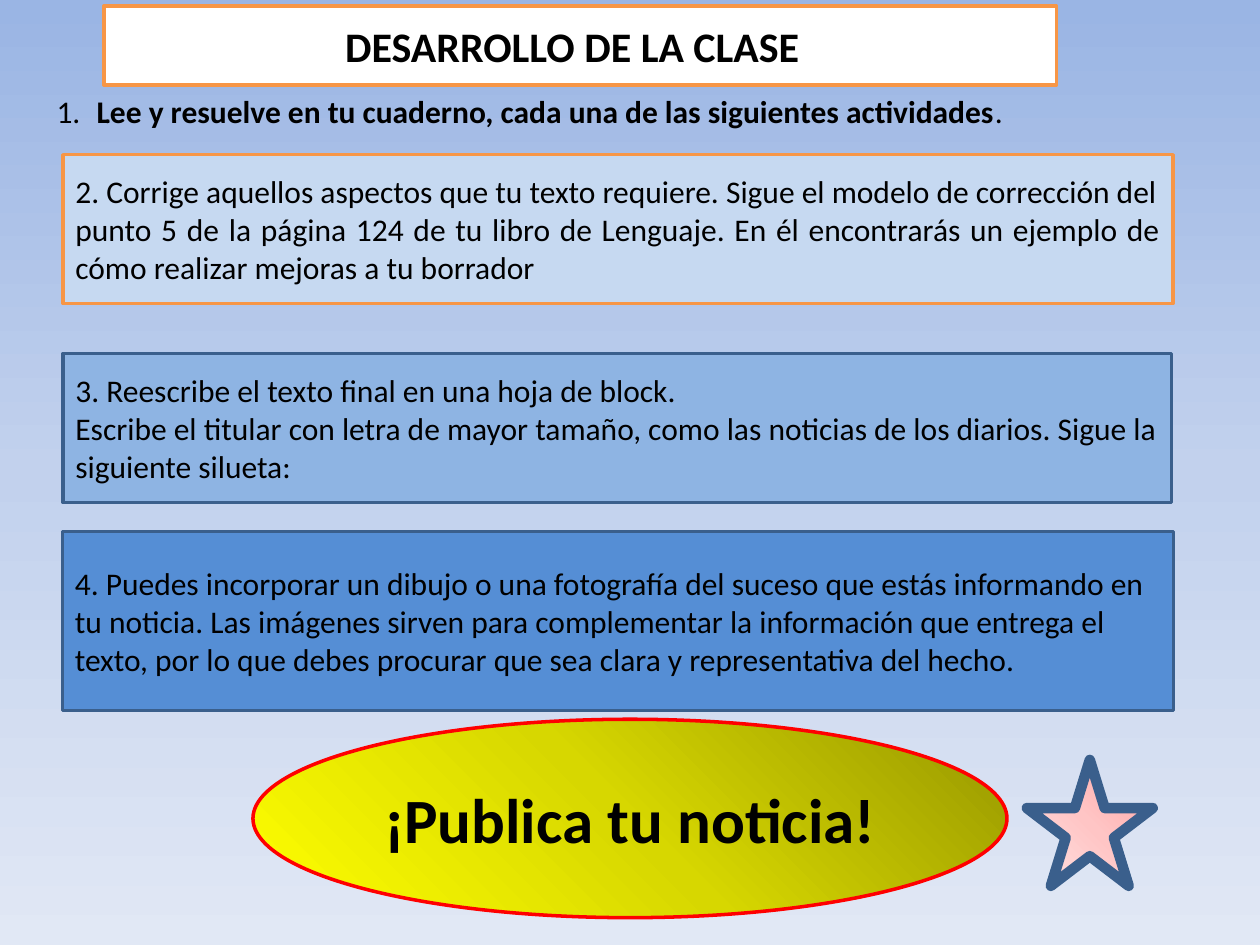
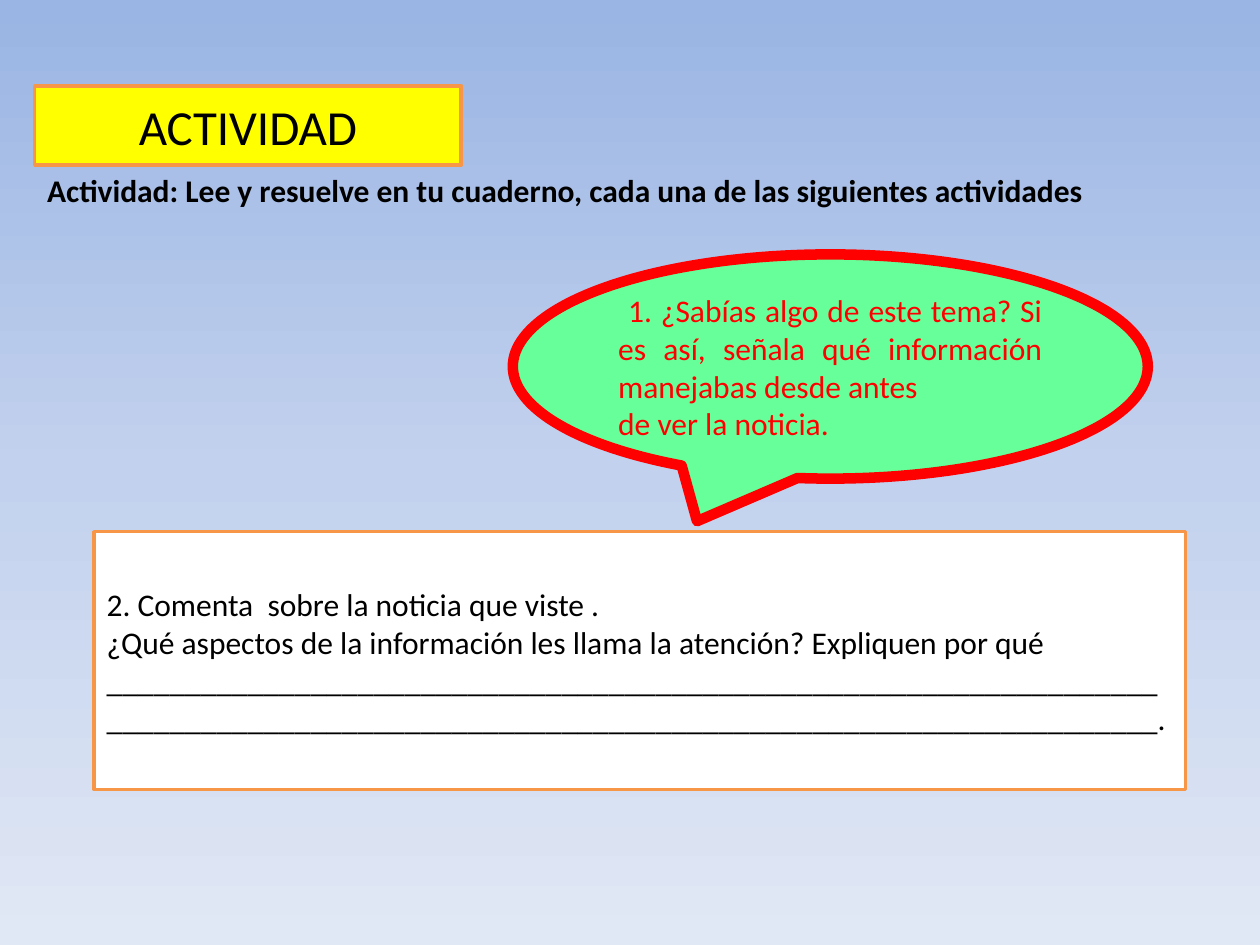
from lxml import etree
from pptx import Presentation
from pptx.dml.color import RGBColor
from pptx.enum.shapes import MSO_SHAPE
from pptx.enum.text import MSO_ANCHOR, PP_ALIGN
from pptx.oxml.ns import qn
from pptx.util import Cm, Pt

RECTANGLE = MSO_SHAPE.RECTANGLE
OVAL = MSO_SHAPE.OVAL
STAR = MSO_SHAPE.STAR_5_POINT
CALLOUT = MSO_SHAPE.OVAL_CALLOUT
LEFT, CENTER, JUSTIFY = PP_ALIGN.LEFT, PP_ALIGN.CENTER, PP_ALIGN.JUSTIFY
MIDDLE = MSO_ANCHOR.MIDDLE

FONT = "Calibri"
COLORS = {
    "black": "000000",
    "white": "FFFFFF",
    "yellow": "FFFF00",
    "red": "FF0000",
    "orange": "F79646",
    "navy": "3A5F8C",
    "pale_blue": "C6D9F1",
    "light_blue": "8EB4E3",
    "blue": "558ED5",
    "green": "66FF99",
}
GRADIENTS = {
    "sky": ("9AB5E4", "C2D1ED", "E1E8F5"),
    "gold": ("979700", "D7D700", "FFFF00"),
    "rose": ("FFA0A0", "FFC5C5", "FFE3E3"),
}


def rgb(name):
    return RGBColor.from_string(COLORS[name])


def paint_gradient(fill, owner, name, angle=None):
    """Fill with three even stops; without an angle, radiate from the top right."""
    fill.gradient()
    gradient = owner.element.find(".//" + qn("a:gradFill"))
    for child in list(gradient):
        gradient.remove(child)
    stops = etree.SubElement(gradient, qn("a:gsLst"))
    for index, color in enumerate(GRADIENTS[name]):
        stop = etree.SubElement(stops, qn("a:gs"), pos=str(index * 50000))
        etree.SubElement(stop, qn("a:srgbClr"), val=color)
    if angle is None:
        circle = etree.SubElement(gradient, qn("a:path"), {"path": "circle"})
        etree.SubElement(circle, qn("a:fillToRect"), l="100000", b="100000")
    else:
        etree.SubElement(gradient, qn("a:lin"), ang=str(angle * 60000), scaled="0")


def write(frame, lines, size=18, bold=False, color="black", align=LEFT):
    frame.word_wrap = True
    for index, line in enumerate(lines):
        paragraph = frame.paragraphs[0] if index == 0 else frame.add_paragraph()
        paragraph.alignment = align
        paragraph.font.name = FONT
        paragraph.font.size = Pt(size)
        paragraph.font.bold = bold
        paragraph.font.color.rgb = rgb(color)
        paragraph.add_run().text = line


def add_figure(slide, kind, box, line, width=2, fill=None):
    figure = slide.shapes.add_shape(kind, *map(Cm, box))
    figure.shadow.inherit = False
    if fill:
        figure.fill.solid()
        figure.fill.fore_color.rgb = rgb(fill)
    figure.line.color.rgb = rgb(line)
    figure.line.width = Pt(width)
    return figure


def add_panel(slide, box, fill, line, lines, kind=RECTANGLE, width=2, **style):
    panel = add_figure(slide, kind, box, line, width, fill)
    panel.text_frame.vertical_anchor = MIDDLE
    write(panel.text_frame, lines, **style)
    return panel


def add_text(slide, box, text, **style):
    frame = slide.shapes.add_textbox(*map(Cm, box)).text_frame
    write(frame, [text], **style)
    return frame.paragraphs[0]


def number(paragraph, indent):
    properties = paragraph._p.get_or_add_pPr()
    properties.set("marL", str(indent))
    properties.set("indent", str(-indent))
    numbering = etree.Element(qn("a:buAutoNum"), type="arabicPeriod")
    properties.insert(0, numbering)


def build_lesson(slide):
    number(add_text(slide, (0.89, 1.73, 22.81, 6.4), ".", align=JUSTIFY), Cm(0.95))
    title = add_panel(slide, (2.1, 0.12, 19.2, 1.6), "white", "orange",
                      ["DESARROLLO DE LA CLASE"], size=24, bold=True, align=CENTER)
    title.text_frame.margin_right = Cm(0.58)
    add_panel(slide, (1.27, 3.12, 22.38, 3), "pale_blue", "orange", [
        "2. Corrige aquellos aspectos que tu texto requiere. Sigue el modelo de corrección del",
        "punto 5 de la página 124 de tu libro de Lenguaje. En él encontrarás un ejemplo de "
        "cómo realizar mejoras a tu borrador",
    ], align=JUSTIFY)
    instruction = add_text(
        slide, (1.7, 1.73, 21.59, 1.02),
        "Lee y resuelve en tu cuaderno, cada una de las siguientes actividades", bold=True)
    full_stop = instruction.add_run()
    full_stop.text = "."
    full_stop.font.bold = False
    add_panel(slide, (1.27, 7.13, 22.35, 3), "light_blue", "navy", [
        "3. Reescribe el texto final en una hoja de block.",
        "Escribe el titular con letra de mayor tamaño, como las noticias de los diarios. "
        "Sigue la siguiente silueta:",
    ])
    add_panel(slide, (1.26, 10.72, 22.4, 3.6), "blue", "navy", [
        "4. Puedes incorporar un dibujo o una fotografía del suceso que estás informando en "
        "tu noticia. Las imágenes sirven para complementar la información que entrega el "
        "texto, por lo que debes procurar que sea clara y representativa del hecho.",
    ])
    publish = add_panel(slide, (5.1, 14.5, 15.2, 4), None, "red",
                        ["¡Publica tu noticia!"], kind=OVAL,
                        size=36, bold=True, align=CENTER)
    paint_gradient(publish.fill, publish, "gold", 135)
    star = add_figure(slide, STAR, (20.7, 15.32, 2.54, 2.54), "navy", 6)
    paint_gradient(star.fill, star, "rose")


def build_activity(slide):
    add_text(slide, (0.7, 3.33, 23.2, 1.02),
             "Actividad: Lee y resuelve en tu cuaderno, cada una de las siguientes actividades",
             bold=True)
    add_panel(slide, (0.7, 1.73, 8.6, 1.6), "yellow", "orange", ["ACTIVIDAD"],
              size=28, align=CENTER)
    question = add_panel(slide, (10.34, 5.13, 12.8, 4.52), "green", "red", [
        "1. ¿Sabías algo de este tema? Si es así, señala qué información manejabas desde antes",
        "de ver la noticia.",
    ], kind=CALLOUT, width=6, color="red", align=JUSTIFY)
    question.adjustments[0] = -0.21
    question.adjustments[1] = 0.69
    first_line = question.text_frame.paragraphs[0]._p.get_or_add_pPr()
    first_line.set("indent", str(Cm(0.2)))
    add_panel(slide, (1.9, 10.72, 22, 5.2), "white", "orange", [
        "2. Comenta  sobre la noticia que viste .",
        "¿Qué aspectos de la información les llama la atención? Expliquen por qué",
        "_" * 134 + ".",
    ])


def main():
    deck = Presentation()
    deck.slide_width, deck.slide_height = Cm(25.4), Cm(19.05)
    master = deck.slide_master
    paint_gradient(master.background.fill, master, "sky", 90)
    blank = deck.slide_layouts[6]
    for build in (build_lesson, build_activity):
        build(deck.slides.add_slide(blank))
    deck.save("out.pptx")


if __name__ == "__main__":
    main()
